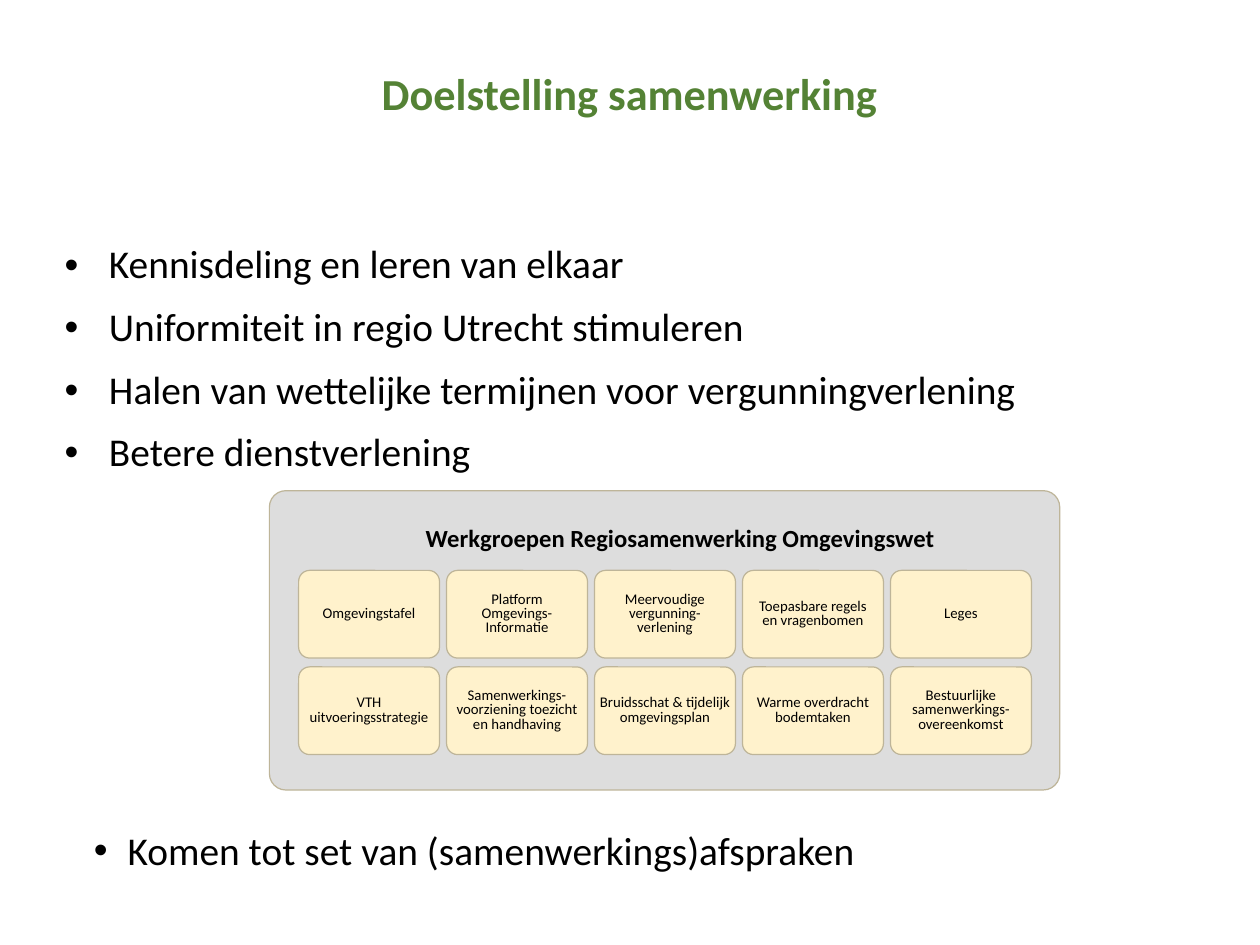
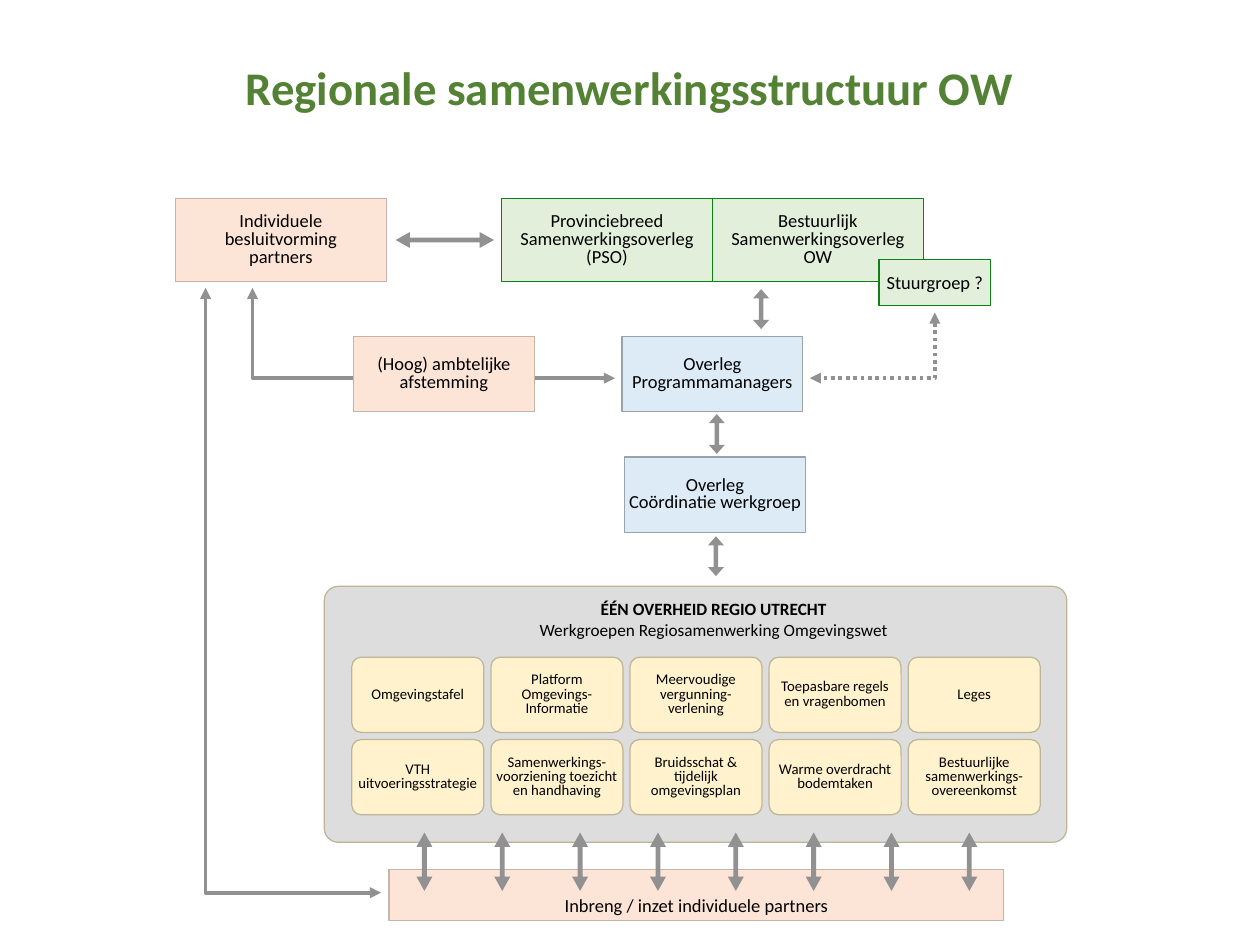
from lxml import etree
from pptx import Presentation
from pptx.dml.color import RGBColor
from pptx.enum import dml, shapes, text
from pptx.oxml import ns
from pptx.util import Inches, Pt

FONT = "Calibri"
COLORS = {
    "title": "548235", "text": "000000", "arrow": "919191",
    "panel": "DDDDDD", "card": "FFF2CC", "card_line": "BEB599",
    "partner": "FCE4D6", "partner_line": "C6B3A9",
    "board": "E2EFDA", "board_line": "0D8114",
    "staff": "DDEBF7", "staff_line": "98A3AB",
}
MIDDLE, BOTTOM, TOP = (text.MSO_ANCHOR.MIDDLE, text.MSO_ANCHOR.BOTTOM,
                       text.MSO_ANCHOR.TOP)
KIND = shapes.MSO_SHAPE

GOALS = [
    "Kennisdeling en leren van elkaar",
    "Uniformiteit in regio Utrecht stimuleren",
    "Halen van wettelijke termijnen voor vergunningverlening",
    "Betere dienstverlening",
]
AGREEMENTS = ["Komen tot set van (samenwerkings)afspraken"]

WORKGROUPS_TITLE = "Werkgroepen Regiosamenwerking Omgevingswet"
WORKGROUPS = [
    [
        ["Omgevingstafel"],
        ["Platform", "Omgevings-", "Informatie"],
        ["Meervoudige", "vergunning-", "verlening"],
        ["Toepasbare regels", "en vragenbomen"],
        ["Leges"],
    ],
    [
        ["VTH", "uitvoeringsstrategie"],
        ["Samenwerkings-", "voorziening toezicht", "en handhaving"],
        ["Bruidsschat & tijdelijk omgevingsplan"],
        ["Warme overdracht bodemtaken"],
        ["Bestuurlijke samenwerkings-", "overeenkomst"],
    ],
]
GOALS_PANEL = {
    "frame": (3.04, 5.54, 8.92, 3.38), "first": (3.37, 6.44),
    "card": (1.59, 0.99), "step": (1.67, 1.09),
    "headings": [(WORKGROUPS_TITLE, (4.57, 5.77, 6.21, 0.61), 20, True)],
}
STRUCTURE_PANEL = {
    "frame": (3.66, 6.62, 8.38, 2.89), "first": (3.97, 7.42),
    "card": (1.49, 0.85), "step": (1.57, 0.93),
    "headings": [
        (WORKGROUPS_TITLE, (5.57, 6.85, 4.97, 0.52), 14, False),
        ("ÉÉN OVERHEID REGIO UTRECHT", (5.57, 6.71, 4.97, 0.33), 14, True),
    ],
}

BODIES = [
    ("partner", (1.98, 2.24, 2.38, 0.94), ["Individuele", "besluitvorming", "partners"], 0.8, MIDDLE),
    ("board", (5.66, 2.24, 2.38, 0.94), ["Provinciebreed Samenwerkingsoverleg (PSO)"], 0.8, MIDDLE),
    ("board", (8.04, 2.24, 2.38, 0.94), ["Bestuurlijk Samenwerkingsoverleg OW"], 0.8, MIDDLE),
    ("board", (9.92, 2.93, 1.26, 0.52), ["Stuurgroep ?"], 1, MIDDLE),
    ("staff", (7.02, 3.8, 2.04, 0.85), ["Overleg", "Programmamanagers"], 0.8, MIDDLE),
    ("staff", (7.05, 5.16, 2.04, 0.85), ["Overleg", "Coördinatie werkgroep"], 0.8, MIDDLE),
    ("partner", (4.39, 9.82, 6.94, 0.57), ["Inbreng / inzet individuele partners"], 1, BOTTOM),
    ("partner", (3.99, 3.8, 2.04, 0.85), ["(Hoog) ambtelijke afstemming"], 0.8, MIDDLE),
]
ELBOWS = [
    ([(2.32, 3.25), (2.32, 10.08), (4.3, 10.08)], False),
    ([(2.85, 3.25), (2.85, 4.27), (6.94, 4.27)], False),
    ([(10.55, 3.53), (10.55, 4.27), (9.14, 4.27)], True),
]
LONG_HEAD, SHORT_HEAD = (0.3, 0.9), (0.28, 0.57)
INPUT_COUNT, INPUT_FIRST, INPUT_LAST = 8, 4.79, 10.94
ARROWS = [
    ((5.02, 2.71), 1.11, 0, LONG_HEAD),
    ((8.59, 3.49), 0.45, 270, SHORT_HEAD),
    ((8.09, 4.9), 0.45, 270, SHORT_HEAD),
    ((8.08, 6.28), 0.45, 270, SHORT_HEAD),
] + [
    ((INPUT_FIRST + i * (INPUT_LAST - INPUT_FIRST) / (INPUT_COUNT - 1), 9.73),
     0.66, 270, LONG_HEAD)
    for i in range(INPUT_COUNT)
]


def color(name):
    return RGBColor.from_string(COLORS[name])


def write(box, lines, size, anchor=MIDDLE, inset=0.05, spacing=1.0, bold=False,
          ink="text", bullet_indent=None, space_before=0):
    frame = box.text_frame
    frame.word_wrap = True
    frame.vertical_anchor = anchor
    frame.margin_left = frame.margin_right = Inches(inset)
    frame.margin_top = frame.margin_bottom = Inches(inset)
    for i, line in enumerate(lines):
        para = frame.paragraphs[0] if i == 0 else frame.add_paragraph()
        if bullet_indent:
            props = para._p.get_or_add_pPr()
            props.set("marL", str(Inches(bullet_indent)))
            props.set("indent", str(-Inches(bullet_indent)))
            etree.SubElement(props, ns.qn("a:buFont"), typeface="Arial")
            etree.SubElement(props, ns.qn("a:buChar"), char="•")
            para.alignment = text.PP_ALIGN.LEFT
        else:
            para.alignment = text.PP_ALIGN.CENTER
        para.line_spacing = spacing
        if i and space_before:
            para.space_before = Pt(space_before)
        span = para.add_run()
        span.text = line
        span.font.name, span.font.size, span.font.bold = FONT, Pt(size), bold
        span.font.color.rgb = color(ink)


def add_text(parent, at, lines, size, **style):
    box = parent.shapes.add_textbox(*map(Inches, at))
    write(box, lines, size, **style)


def add_box(parent, kind, at, fill, outline=None, adjust=()):
    box = parent.shapes.add_shape(kind, *map(Inches, at))
    box.shadow.inherit = False
    box.fill.solid()
    box.fill.fore_color.rgb = color(fill)
    if outline:
        box.line.color.rgb = color(outline)
        box.line.width = Pt(1)
    else:
        box.line.fill.background()
    for i, value in enumerate(adjust):
        box.adjustments[i] = value
    return box


def add_panel(page, panel):
    group = page.shapes.add_group_shape()
    add_box(group, KIND.ROUNDED_RECTANGLE, panel["frame"], "panel", "card_line", [0.055])
    left, top = panel["first"]
    across, down = panel["step"]
    for row, names in enumerate(WORKGROUPS):
        for column, lines in enumerate(names):
            at = (left + column * across, top + row * down, *panel["card"])
            card = add_box(group, KIND.ROUNDED_RECTANGLE, at, "card", "card_line", [0.126])
            write(card, lines, 12, inset=0, spacing=0.8)
    for heading, at, size, bold in panel["headings"]:
        add_text(group, at, [heading], size, bold=bold)


def add_elbow(page, points, dotted):
    start, *rest = [tuple(map(Inches, point)) for point in points]
    builder = page.shapes.build_freeform(*start)
    builder.add_line_segments(rest, close=False)
    elbow = builder.convert_to_shape()
    elbow.shadow.inherit = False
    elbow.fill.background()
    elbow.line.color.rgb = color("arrow")
    elbow.line.width = Pt(3)
    if dotted:
        elbow.line.dash_style = dml.MSO_LINE.ROUND_DOT
    outline = elbow.element.spPr.get_or_add_ln()
    for end in ("a:headEnd", "a:tailEnd"):
        etree.SubElement(outline, ns.qn(end), type="triangle")


def add_arrow(page, center, length, rotation, head):
    x, y = center
    thickness = 0.18
    at = (x - length / 2, y - thickness / 2, length, thickness)
    arrow = add_box(page, KIND.LEFT_RIGHT_ARROW, at, "arrow", adjust=head)
    arrow.rotation = rotation


def add_page(deck, title, top, height, size):
    page = deck.slides.add_slide(deck.slide_layouts[6])
    add_text(page, (2.39, top, 9.43, height), [title], size,
             anchor=BOTTOM, spacing=0.9, bold=True, ink="title")
    return page


def build_goals(deck):
    page = add_page(deck, "Doelstelling samenwerking", 0.16, 1.25, 36)
    add_text(page, (0.68, 2.69, 13.12, 6.35), GOALS, 32, anchor=TOP,
             spacing=0.96, bullet_indent=0.5, space_before=14)
    add_panel(page, GOALS_PANEL)
    add_text(page, (1.01, 9.28, 9.59, 0.65), AGREEMENTS, 32, anchor=TOP,
             bullet_indent=0.38)


def build_structure(deck):
    page = add_page(deck, "Regionale samenwerkingsstructuur OW", 0.4, 0.96, 38)
    for points, dotted in ELBOWS:
        add_elbow(page, points, dotted)
    for role, at, lines, spacing, anchor in BODIES:
        body = add_box(page, KIND.RECTANGLE, at, role, role + "_line")
        write(body, lines, 15, anchor=anchor, spacing=spacing)
    add_panel(page, STRUCTURE_PANEL)
    for arrow in ARROWS:
        add_arrow(page, *arrow)


def main():
    deck = Presentation()
    deck.slide_width, deck.slide_height = Inches(14.22), Inches(10.67)
    build_goals(deck)
    build_structure(deck)
    deck.save("out.pptx")


if __name__ == "__main__":
    main()
